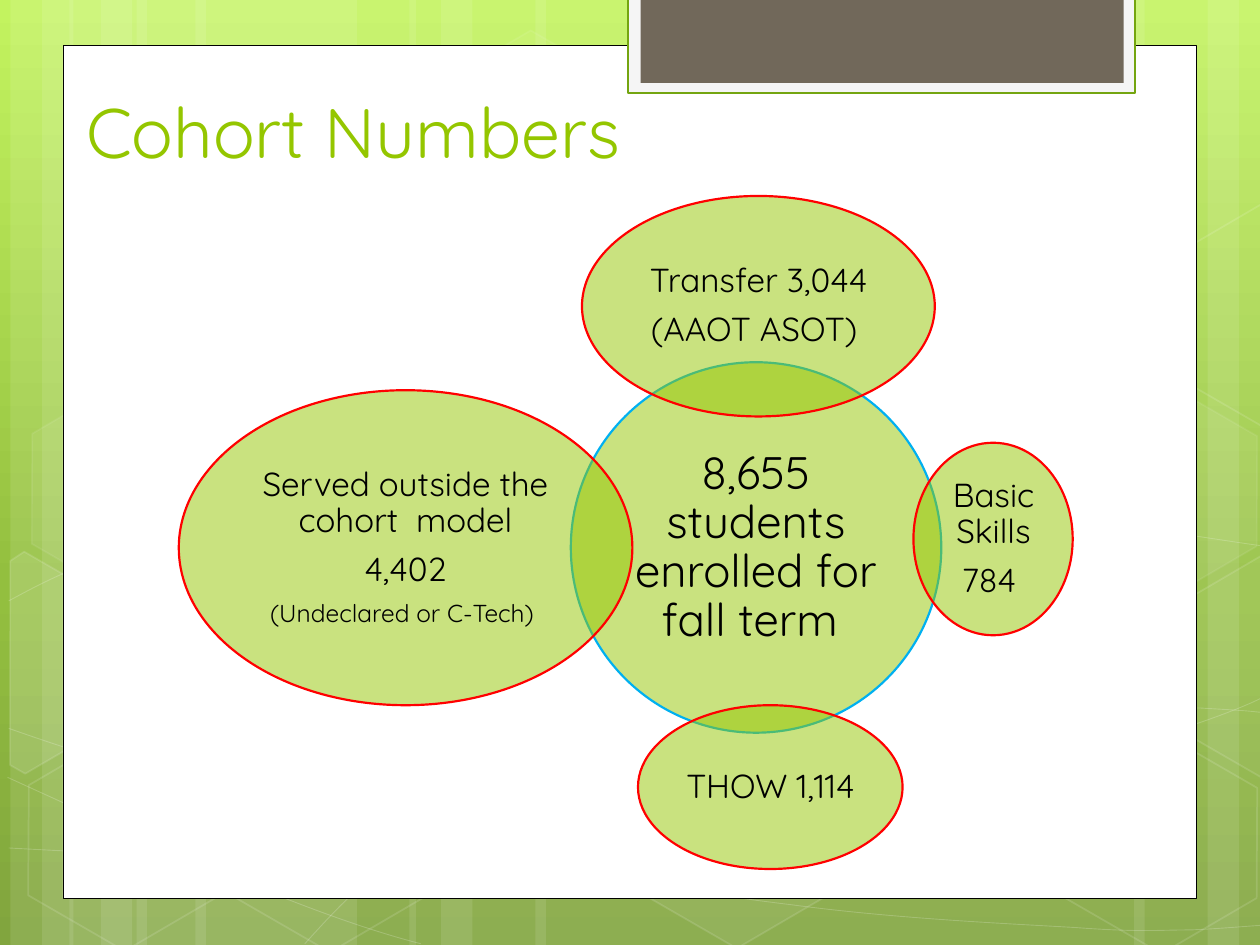
"""Build the Cohort Numbers slide: overlapping ellipses on a green backdrop."""
from copy import deepcopy

from lxml.etree import SubElement
from pptx import Presentation
from pptx.dml.color import RGBColor
from pptx.enum.shapes import MSO_SHAPE
from pptx.enum.text import MSO_ANCHOR, PP_ALIGN
from pptx.oxml.ns import qn
from pptx.util import Pt

FONT = "Quicksand"
WHITE = RGBColor(0xFF, 0xFF, 0xFF)
BLACK = RGBColor(0x00, 0x00, 0x00)
GREEN = RGBColor(0x94, 0xC6, 0x00)
RED = RGBColor(0xFF, 0x00, 0x00)
BLUE = RGBColor(0x00, 0xB0, 0xF0)
PALE = RGBColor(0xF5, 0xF5, 0xF5)
MOSS = RGBColor(0x74, 0xA5, 0x10)
BROWN = RGBColor(0x71, 0x68, 0x5A)
FADE = ((0, RGBColor(0xC3, 0xF3, 0x5F)),
        (0.62, RGBColor(0x93, 0xBF, 0x3F)),
        (1, RGBColor(0x81, 0xA5, 0x3E)))

BANDS = ((78, 126, 0), (6, 36, 0), (24, 60, 0), (111.6, 126, 0),
         (39.6, 36, 0), (57.6, 60, 0), (528, 126, 180), (690, 36, 180),
         (648, 60, 180), (306, 222, 0), (234, 36, 0), (252, 60, 0))

CURVES = (
    ((5, 484.6), (44, 486.7), (83, 489), (136.8, 488.2), (191, 487.4),
     (258, 486), (329.8, 478.8), (402, 471.6), (504, 458), (570.2, 444.2),
     (636, 430.6), (703.4, 409), (725, 396.7)),
    ((5, 343.4), (26, 332), (47, 321), (87, 310.3), (128, 299.5),
     (186.5, 283.7), (249.8, 278.6), (314, 273.6), (391.7, 273), (471, 278.6),
     (550, 284.4), (682, 306.7), (725, 312.5)),
    ((4.3, 444.2), (91.4, 484), (178, 523.4), (240.5, 539.3)),
    ((5, 416.2), (27.4, 424), (50.4, 432), (92.2, 443.5), (134, 454.3),
     (196.6, 472.3), (257, 484.6), (316.8, 496.8), (392.4, 509.8), (452.2, 517),
     (512, 525), (576, 527.8), (614.2, 530), (651.6, 532.8), (661.7, 531.4),
     (680.4, 531.4), (699, 530.6), (712, 529.2), (725, 528.5)),
    ((174.2, 539.3), (187.2, 525), (200.2, 510.5), (217.4, 497.5),
     (234.7, 484.6), (259.2, 470.2), (279.4, 460), (299.5, 450), (311.8, 445.7),
     (338.4, 438.5), (364.3, 431.3), (412.6, 421.2), (437.8, 416.2),
     (463.7, 411), (467.3, 411), (489.6, 409.7), (512, 407.5), (547.2, 405.4),
     (571.7, 404.6), (597, 404), (638, 404.6), (638, 404.6), (654, 404.6),
     (670, 404.6), (686.2, 404.6), (699, 405.4), (711.4, 406), (717.8, 406.8),
     (724.3, 407.5), (722.2, 406.8), (724.3, 407.5)),
)

HEXES = ((240.5, 26, 4, 8), (357.8, 424, 6, 12), (8, 425.5, 0, 12),
         (10, 224.6, 7, 8), (125.3, 426.2, 0, 12), (542.2, 326.2, 10, 12),
         (600.5, 427, 0, 12), (600.5, 226, 7, 8))

LEFT = ((-49.8, -46), (-45.5, -54.6), (18.4, -54.6), (49.4, 0.6), (18.4, 55),
        (8.4, 55))
RIGHT = ((-49.4, -0.6), (-18.4, -55), (-11.7, -55), (48.5, 49.3), (45.5, 54.4),
         (-17.7, 54.4))
SHARDS = ((LEFT, 25.9, 385.2, 10), (RIGHT, 709.2, 374.4, 4),
          (RIGHT, 709.2, 173.5, 0))

RINGS = (
    ((326.2, 207, 211.7, 211.7), BLUE, (357.1, 238.3, 149.8, 149.8),
     (("8,655 students enrolled for fall term ", 26),)),
    ((332.6, 112, 201.6, 126), RED, (362.2, 130.3, 142.6, 89.3),
     (("Transfer 3,044", 19), ("(AAOT ASOT) ", 19))),
    ((522, 253, 91, 110), RED, (535.7, 269.3, 64.1, 77.8),
     (("Basic Skills", 19), ("784 ", 19))),
    ((364.6, 403, 151.2, 93.6), RED, (386.6, 416.9, 107.3, 66.2),
     (("THOW 1,114", 19),)),
    ((102.2, 223, 259.2, 180), RED, (139.9, 249.3, 183.6, 127.4),
     (("Served outside the cohort  model", 19), ("4,402", 19),
      ("(Undeclared or C-Tech) ", 14))),
)


def veil(shape, route, share):
    """Set the opacity, in percent, of a colour in the shape."""
    for node in shape._element.xpath(f"./p:spPr/{route}a:solidFill/a:srgbClr"):
        SubElement(node, qn("a:alpha")).set("val", str(share * 1000))


def paint(shape, fill=None, share=100, edge=None, width=1, clear=100):
    """Give a shape its fill and line, with opacities in percent."""
    shape.shadow.inherit = False
    if fill is None or share == 0:
        shape.fill.background()
    else:
        shape.fill.solid()
        shape.fill.fore_color.rgb = fill
        if share < 100:
            veil(shape, "", share)
    if edge is None:
        shape.line.fill.background()
    else:
        shape.line.color.rgb = edge
        shape.line.width = Pt(width)
        if clear < 100:
            veil(shape, "a:ln/", clear)


def add_form(slide, kind, box, turn=0, **look):
    """Add a painted preset shape."""
    shape = slide.shapes.add_shape(kind, *map(Pt, box))
    shape.rotation = turn
    paint(shape, **look)
    return shape


def add_path(slide, dots, close, **look):
    """Add a painted outline through the dots."""
    spots = [(Pt(x), Pt(y)) for x, y in dots]
    pen = slide.shapes.build_freeform(*spots[0])
    pen.add_line_segments(spots[1:], close=close)
    shape = pen.convert_to_shape()
    paint(shape, **look)
    return shape


def bend(shape):
    """Turn each three line steps of an outline into one cubic curve."""
    steps = shape._element.xpath(".//a:path/a:lnTo")
    for i in range(0, len(steps), 3):
        curve = SubElement(steps[i].getparent(), qn("a:cubicBezTo"))
        for step in steps[i:i + 3]:
            curve.append(step[0])
            step.getparent().remove(step)


def add_text(slide, box, lines, tone, anchor, inset):
    """Add a text box and return its paragraphs."""
    frame = slide.shapes.add_textbox(*map(Pt, box)).text_frame
    frame.word_wrap = True
    frame.vertical_anchor = anchor
    frame.margin_left = frame.margin_right = Pt(inset[0])
    frame.margin_top = frame.margin_bottom = Pt(inset[1])
    for i, (words, size) in enumerate(lines):
        para = frame.add_paragraph() if i else frame.paragraphs[0]
        run = para.add_run()
        run.text = words
        run.font.name = FONT
        run.font.size = Pt(size)
        run.font.color.rgb = tone
    return frame.paragraphs


def add_ring(slide, oval, edge, box, lines):
    """Add a see-through ellipse with its centred words."""
    add_form(slide, MSO_SHAPE.OVAL, oval, fill=GREEN, share=50, edge=edge, width=1.25)
    paras = add_text(slide, box, lines, BLACK, MSO_ANCHOR.MIDDLE, (2.2, 2.2))
    for para, (_, size) in zip(paras, lines):
        para.alignment = PP_ALIGN.CENTER
        para.line_spacing = 0.9
        para.space_after = Pt(round(size * 0.38, 1))


def add_back(slide):
    """Draw the gradient, bands, curves and hexagons."""
    fill = slide.background.fill
    fill.gradient()
    fill.gradient_angle = 270
    stops = slide._element.find(".//" + qn("a:gsLst"))
    stops.append(deepcopy(stops[-1]))
    for stop, (place, tone) in zip(fill.gradient_stops, FADE):
        stop.position = place
        stop.color.rgb = tone
    for left, wide, turn in BANDS:
        add_form(slide, MSO_SHAPE.RECTANGLE, (left, 0, wide, 540), turn,
                 fill=WHITE, share=10)
    for knots in CURVES:
        bend(add_path(slide, knots, False, edge=WHITE, width=0.5, clear=20))
    for left, top, share, clear in HEXES:
        tile = add_form(slide, MSO_SHAPE.HEXAGON, (left, top, 126, 109.4), 30,
                        fill=WHITE, share=share, edge=WHITE, clear=clear)
        tile.adjustments[0] = 0.285
    for dots, across, down, share in SHARDS:
        spots = [(across + x, down + y) for x, y in dots]
        shard = add_path(slide, spots, True, fill=WHITE, share=share,
                         edge=WHITE, clear=12)
        shard.rotation = 30


def add_panel(slide):
    """Draw the white panel and the tab at its top."""
    kind = MSO_SHAPE.RECTANGLE
    add_form(slide, kind, (36, 26, 648, 487.3), fill=WHITE, edge=BLACK, width=0.5)
    add_form(slide, kind, (359, -1.4, 289.6, 54.7), fill=PALE, edge=MOSS, width=1.25)
    add_form(slide, kind, (366.1, -1.4, 276, 48.8), fill=BROWN)


def main():
    """Build and save the slide."""
    deck = Presentation()
    deck.slide_width, deck.slide_height = Pt(720), Pt(540)
    slide = deck.slides.add_slide(deck.slide_layouts[6])
    add_back(slide)
    add_panel(slide)
    for ring in RINGS:
        add_ring(slide, *ring)
    add_text(slide, (42.2, 24, 636, 78), (("Cohort Numbers", 40),), GREEN,
             MSO_ANCHOR.BOTTOM, (7.2, 3.6))
    deck.save("out.pptx")


if __name__ == "__main__":
    main()
